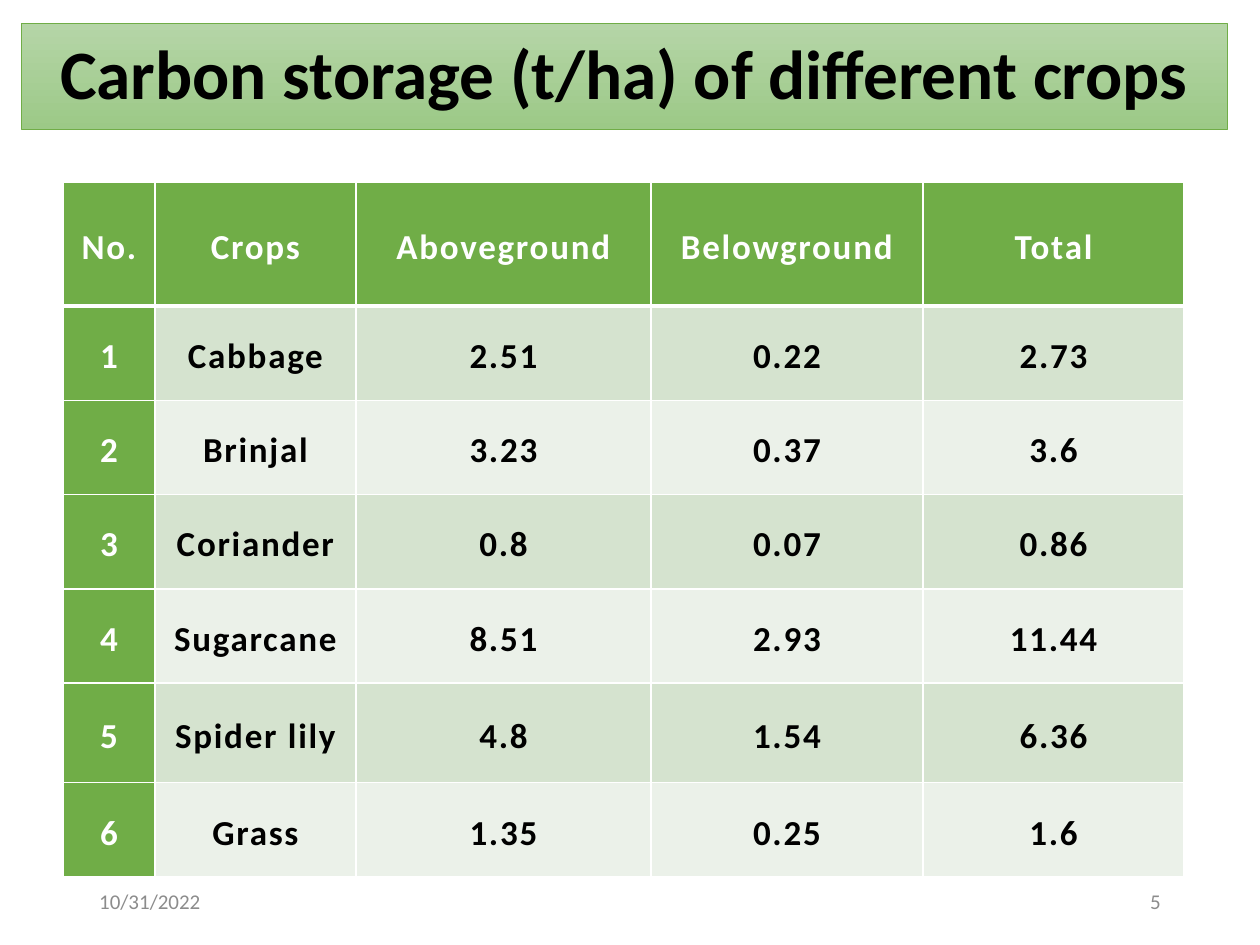
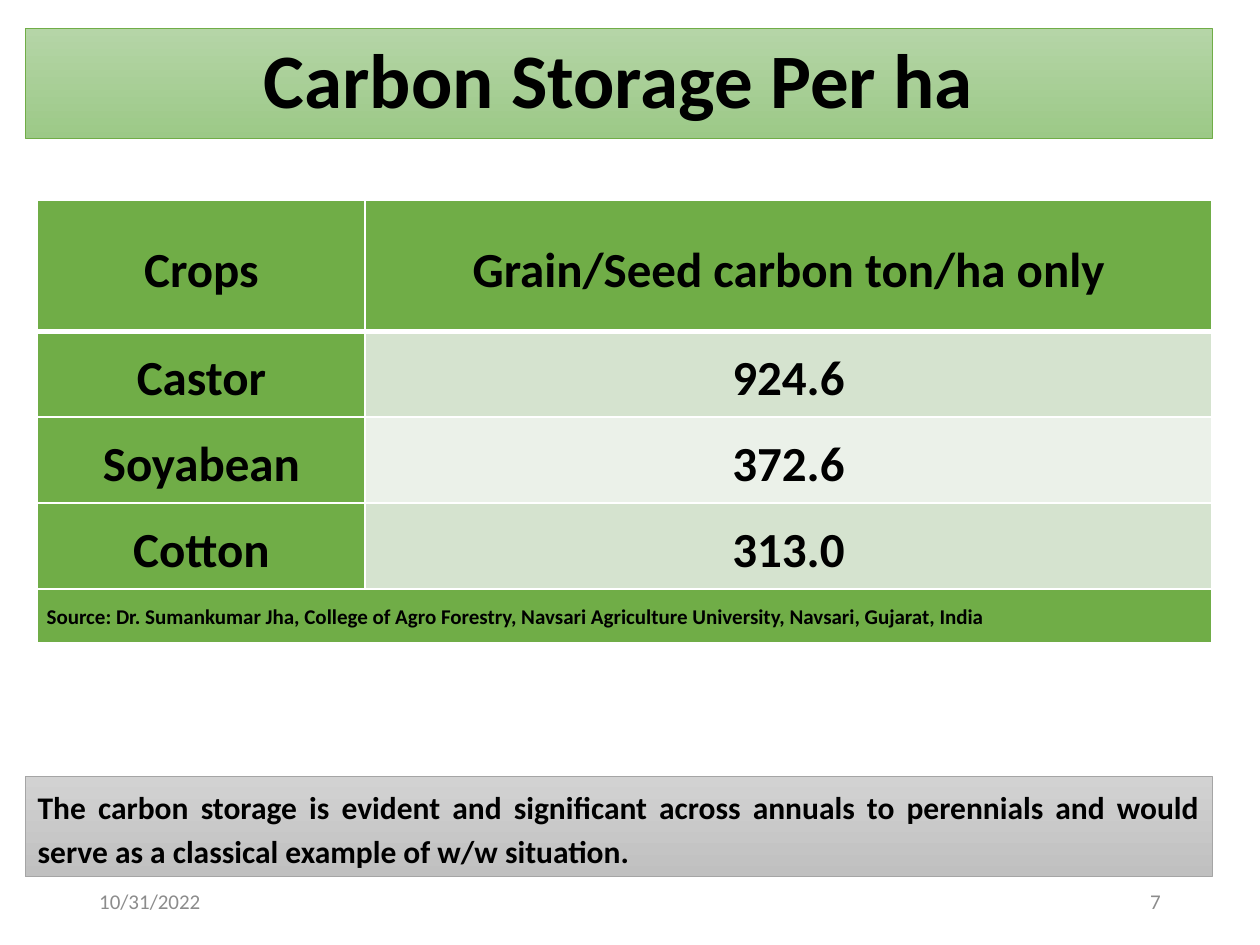
"""Build two slides of tables on carbon storage by crop."""
from lxml import etree
from pptx import Presentation
from pptx import util as u
from pptx.dml.color import RGBColor
from pptx.enum import shapes, text
from pptx.oxml import ns

GREEN, PALE, PALER = "70AD47", "D5E3CF", "EBF1E9"
BLACK, WHITE, GREY = "000000", "FFFFFF", "8C8C8C"
GREEN_BAND = ("B5D5A7", "9CC987", GREEN)
GREY_BAND = ("D2D2D2", "C0C0C0", "A5A5A5")
AL = text.PP_ALIGN
MIDDLE = text.MSO_ANCHOR.MIDDLE
rgb = RGBColor.from_string


def write(tf, words, size, colour, align, spacing=1.0, bold=True):
    """Put one formatted paragraph in a text frame and return its run."""
    p = tf.paragraphs[0]
    for name, value in {"alignment": align, "line_spacing": spacing,
                        "space_before": u.Pt(0)}.items():
        setattr(p, name, value)
    r = p.add_run()
    r.text = words
    for name, value in {"name": "Calibri", "size": u.Pt(size), "bold": bold}.items():
        setattr(r.font, name, value)
    r.font.color.rgb = rgb(colour)
    return r


def band(sp, box, colours):
    """Place a shape and give it a vertical gradient and a thin outline."""
    for name, value in zip(("left", "top", "width", "height"), box):
        setattr(sp, name, u.Cm(value))
    sp.fill.gradient()
    sp.fill.gradient_angle = 270
    for stop, colour in zip(sp.fill.gradient_stops, colours):
        stop.color.rgb = rgb(colour)
    sp.line.color.rgb = rgb(colours[2])
    sp.line.width = u.Pt(0.5)
    sp.text_frame.word_wrap = True


SLIDES = [
    {"title": "Carbon storage (t/ha) of different crops", "size": 39.6,
     "band": (0.43, 0.48, 24.31, 2.13), "number": "5",
     "at": (1.27, 3.68), "cols": (1.85, 4.06, 5.94, 5.49, 5.26),
     "heights": (2.49, 1.9, 1.9, 1.9, 1.9, 2.01, 1.9),
     "text": 20, "head": WHITE, "tracking": "100",
     "rows": [("No.", "Crops", "Aboveground", "Belowground", "Total"),
              ("1", "Cabbage", "2.51", "0.22", "2.73"),
              ("2", "Brinjal", "3.23", "0.37", "3.6"),
              ("3", "Coriander", "0.8", "0.07", "0.86"),
              ("4", "Sugarcane", "8.51", "2.93", "11.44"),
              ("5", "Spider lily", "4.8", "1.54", "6.36"),
              ("6", "Grass", "1.35", "0.25", "1.6")]},
    {"title": "Carbon Storage Per ha", "size": 44,
     "band": (0.51, 0.58, 23.93, 2.21), "number": "7",
     "at": (0.76, 4.04), "cols": (6.6, 17.07),
     "heights": (2.64, 1.73, 1.73, 1.73, 1.09),
     "text": 28, "head": BLACK, "tracking": "0",
     "rows": [("Crops", "Grain/Seed carbon ton/ha only"),
              ("Castor", "924.6"),
              ("Soyabean", "372.6"),
              ("Cotton", "313.0"),
              ("Source: Dr. Sumankumar Jha, College of Agro Forestry, "
               "Navsari Agriculture University, Navsari, Gujarat, India",)],
     "note": "The carbon storage is evident and significant across annuals to "
             "perennials and would serve as a classical example of w/w situation."},
]

prs = Presentation()
prs.slide_width, prs.slide_height = u.Cm(25.4), u.Cm(19.05)

for page in SLIDES:
    s = prs.slides.add_slide(prs.slide_layouts[5])
    title = s.shapes.title
    band(title, page["band"], GREEN_BAND)
    title.text_frame.auto_size = text.MSO_AUTO_SIZE.NONE
    title.text_frame.vertical_anchor = MIDDLE
    write(title.text_frame, page["title"], page["size"], BLACK, AL.CENTER, 0.9)

    rows, cols, heights = page["rows"], page["cols"], page["heights"]
    box = (*page["at"], sum(cols), sum(heights))
    table = s.shapes.add_table(len(rows), len(cols), *map(u.Cm, box)).table
    for column, width in zip(table.columns, cols):
        column.width = u.Cm(width)
    for row, height in zip(table.rows, heights):
        row.height = u.Cm(height)

    for i, words in enumerate(rows):
        source = len(words) < len(cols)
        if source:
            table.cell(i, 0).merge(table.cell(i, len(cols) - 1))
        for j in range(len(cols)):
            cell = table.cell(i, j)
            for name, value in {"margin_left": u.Cm(0.18), "margin_right": u.Cm(0.18),
                                "margin_top": 0, "margin_bottom": 0,
                                "vertical_anchor": MIDDLE}.items():
                setattr(cell, name, value)
            tc_pr = cell._tc.get_or_add_tcPr()
            for side in "LRTB":
                thick = (i, side) in ((0, "B"), (1, "T"))
                ln = etree.SubElement(tc_pr, ns.qn(f"a:ln{side}"),
                                      w=str(u.Pt(3 if thick else 1)))
                fill = etree.SubElement(ln, ns.qn("a:solidFill"))
                etree.SubElement(fill, ns.qn("a:srgbClr"), val=WHITE)
            green = i == 0 or j == 0 or source
            cell.fill.solid()
            cell.fill.fore_color.rgb = rgb(GREEN if green else PALE if i % 2 else PALER)
            if j < len(words):
                r = write(cell.text_frame, words[j], 12 if source else page["text"],
                          page["head"] if green else BLACK,
                          AL.LEFT if source else AL.CENTER, 1.15)
                r.font._element.set("spc", page["tracking"])

    if "note" in page:
        note = s.shapes.add_shape(shapes.MSO_SHAPE.RECTANGLE, 0, 0, 0, 0)
        note.shadow.inherit = False
        band(note, (0.51, 15.65, 23.93, 2.03), GREY_BAND)
        note.text_frame.vertical_anchor = text.MSO_ANCHOR.TOP
        note.text_frame.auto_size = text.MSO_AUTO_SIZE.SHAPE_TO_FIT_TEXT
        write(note.text_frame, page["note"], 18, BLACK, AL.JUSTIFY, 1.15)

    for left, words, align in ((1.75, "10/31/2022", AL.LEFT),
                               (17.93, page["number"], AL.RIGHT)):
        footer = s.shapes.add_textbox(*map(u.Cm, (left, 17.65, 5.72, 1.02)))
        footer.text_frame.word_wrap = True
        footer.text_frame.vertical_anchor = MIDDLE
        write(footer.text_frame, words, 12, GREY, align, bold=False)

prs.save("out.pptx")
